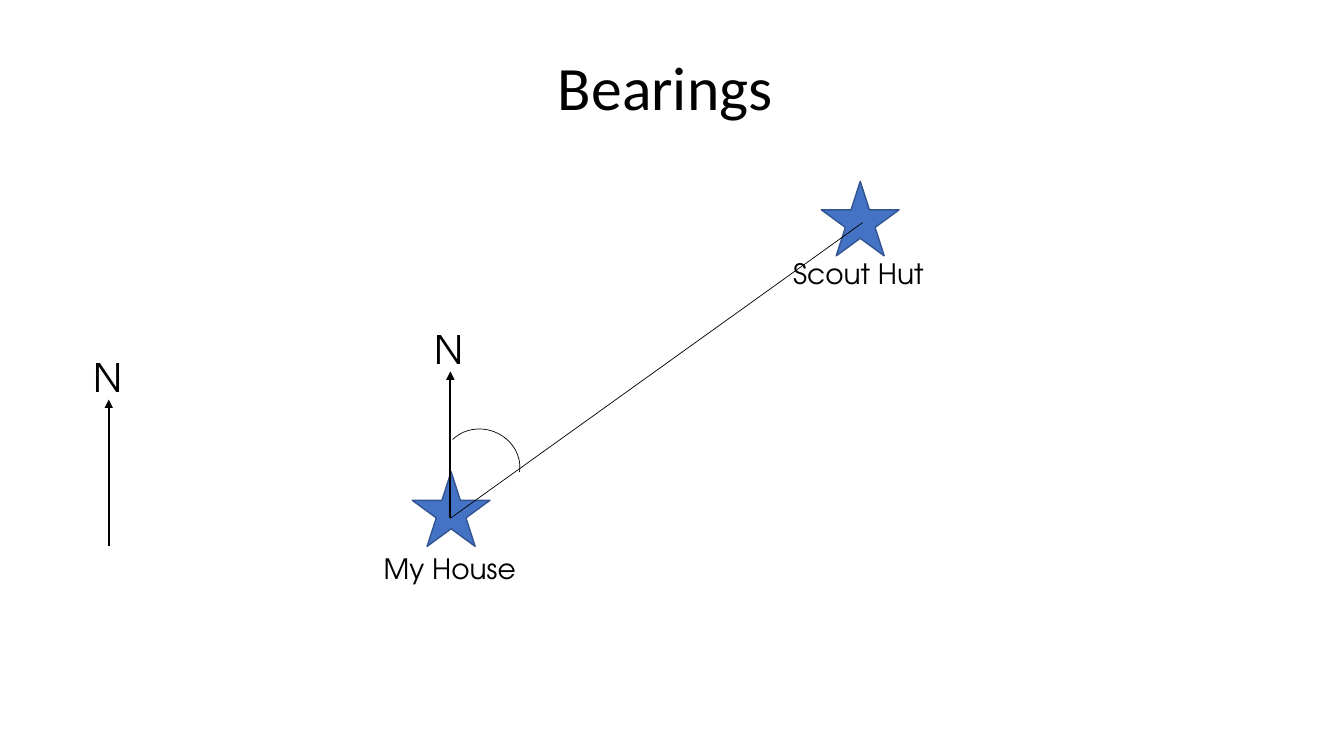
from lxml import etree
from pptx import Presentation
from pptx.dml.color import RGBColor
from pptx.enum.shapes import MSO_CONNECTOR as Connector, MSO_SHAPE as Shape
from pptx.enum.text import MSO_ANCHOR as Anchor, PP_ALIGN as Align
from pptx.oxml.ns import qn
from pptx.util import Cm, Pt

COLORS = {"ink": "000000", "star": "4472C4", "star_edge": "325491"}
TITLE_FONT, LABEL_FONT = "Calibri", "TeX Gyre Adventor"

# Content, lengths in cm
TITLE = ("Bearings ", (2.34, 0.43, 29.21, 3.68))
PLACES = [  # name, star corner, label corner
    ("My House", (10.39, 11.89), (9.42, 13.77)),
    ("Scout Hut", (20.7, 4.57), (19.74, 6.35)),
]
STAR_SIZE = (1.96, 1.88)
PLACE_LABEL_SIZE = (3.89, 1.12)
HOUSE, HUT = (11.35, 13.06), (21.74, 5.61)
NORTH_FEET = [(2.74, 13.77), HOUSE]
NORTH_LENGTH = 3.7
NORTH_LABEL_SIZE = (1.24, 1.45)
NORTH_LABEL_OFFSET = (0.64, 1.28)  # left of and above the arrow tip
ANGLE_BOX = (11.15, 10.82, 1.96, 1.8)
ANGLE_TURN, ANGLE_SWEEP = 19.2, (202.5, 351.1)  # degrees


def cm(values):
    return [Cm(value) for value in values]


def rgb(name):
    return RGBColor.from_string(COLORS[name])


def add_text(slide, words, box, font, size, wrap=False):
    frame = slide.shapes.add_textbox(*cm(box)).text_frame
    frame.word_wrap = wrap
    frame.text = words
    face = frame.paragraphs[0].runs[0].font
    face.name, face.size, face.color.rgb = font, Pt(size), rgb("ink")
    return frame


def add_line(slide, start, end, width, arrow=False):
    line = slide.shapes.add_connector(Connector.STRAIGHT, *cm(start + end))
    line.line.color.rgb, line.line.width = rgb("ink"), Pt(width)
    if arrow:
        tip = etree.SubElement(line.line._get_or_add_ln(), qn("a:tailEnd"))
        tip.set("type", "triangle")
    etree.SubElement(line._element.spPr, qn("a:effectLst"))


def add_outline(slide, kind, box, color, width):
    shape = slide.shapes.add_shape(kind, *cm(box))
    shape.shadow.inherit = False
    shape.line.color.rgb, shape.line.width = rgb(color), Pt(width)
    return shape


def main():
    deck = Presentation()
    deck.slide_width, deck.slide_height = Cm(33.87), Cm(19.05)
    slide = deck.slides.add_slide(deck.slide_layouts[6])

    # Title
    title = add_text(slide, *TITLE, TITLE_FONT, 44, wrap=True)
    title.vertical_anchor = Anchor.MIDDLE
    title.paragraphs[0].alignment = Align.CENTER
    title.paragraphs[0].line_spacing = 0.9

    # Places
    for name, star_corner, label_corner in PLACES:
        star = add_outline(slide, Shape.STAR_5_POINT, star_corner + STAR_SIZE, "star_edge", 1)
        star.fill.solid()
        star.fill.fore_color.rgb = rgb("star")
        add_text(slide, name, label_corner + PLACE_LABEL_SIZE, LABEL_FONT, 20)

    # North arrows
    for x, foot in NORTH_FEET:
        tip = foot - NORTH_LENGTH
        add_line(slide, (x, foot), (x, tip), 1.5, arrow=True)
        corner = (x - NORTH_LABEL_OFFSET[0], tip - NORTH_LABEL_OFFSET[1])
        add_text(slide, "N", corner + NORTH_LABEL_SIZE, LABEL_FONT, 28)

    # Line of sight and bearing angle
    add_line(slide, HOUSE, HUT, 0.5)
    angle = add_outline(slide, Shape.ARC, ANGLE_BOX, "ink", 0.5)
    angle.fill.background()
    angle.rotation = ANGLE_TURN
    for index, degrees in enumerate(ANGLE_SWEEP):
        angle.adjustments[index] = degrees * 0.6  # 60000 units per degree, scaled by 100000

    deck.save("out.pptx")


if __name__ == "__main__":
    main()
